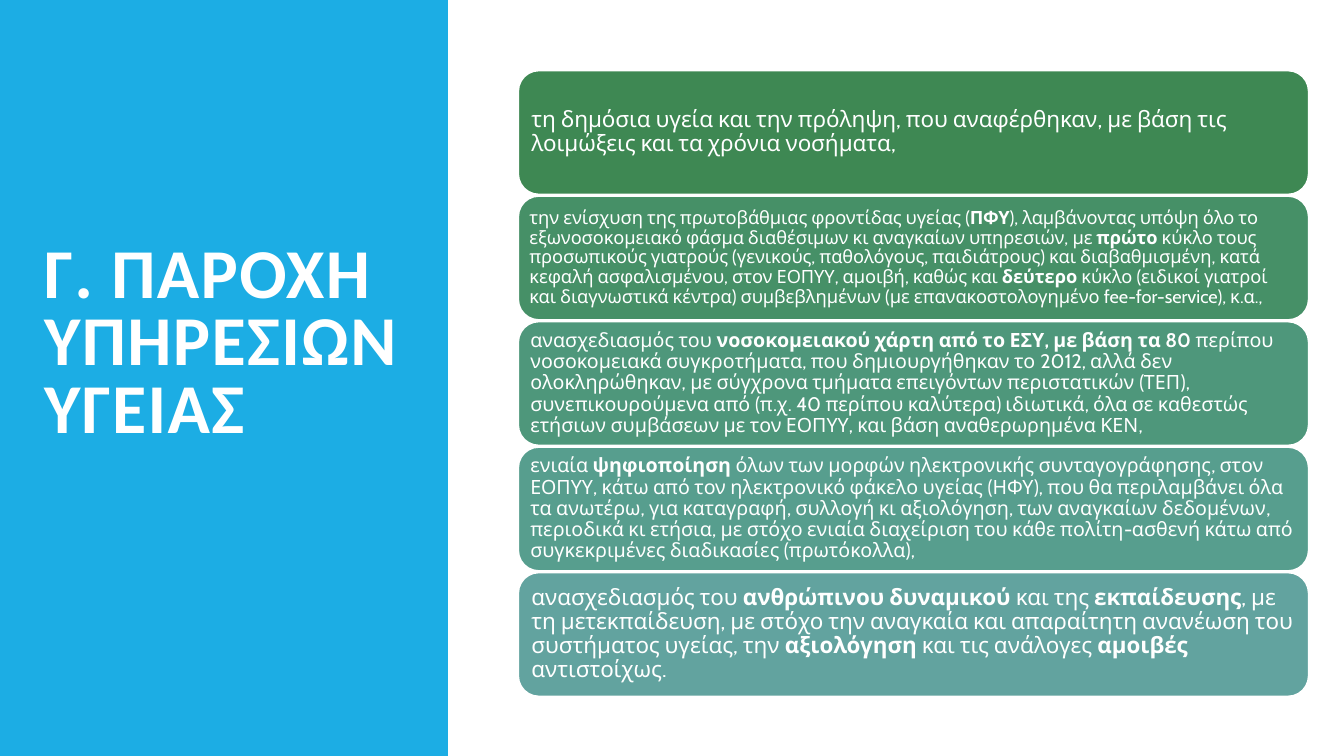
from dataclasses import dataclass

import pptx
import pptx.dml.color
import pptx.enum.shapes
import pptx.enum.text
import pptx.util

SLIDE_WIDTH = 13.33
SLIDE_HEIGHT = 7.5
COLOURS = {
    "panel": "1CADE4",
    "white": "FFFFFF",
    "prevention": "3E8853",
    "primary care": "469067",
    "hospitals": "4E977B",
    "digital": "579E8E",
    "workforce": "62A39F",
}
PANEL_SHARE = 1 / 3
CARD_LEFT = 5.14
CARD_WIDTH = 7.84
CARD_TOP = 0.7
CARD_HEIGHT = 1.23
CARD_PITCH = 1.245


@dataclass(frozen=True)
class Card:
    colour: str
    size: int
    inset: float
    text: str


CARDS = [
    Card("prevention", 16, 0.07,
         "τη δημόσια υγεία και την πρόληψη, που αναφέρθηκαν, με βάση τις "
         "λοιμώξεις και τα χρόνια νοσήματα,"),
    Card("primary care", 13, 0.05,
         "την ενίσχυση της πρωτοβάθμιας φροντίδας υγείας (*ΠΦΥ*), λαμβάνοντας "
         "υπόψη όλο το εξωνοσοκομειακό φάσμα διαθέσιμων κι αναγκαίων υπηρεσιών, "
         "με *πρώτο* κύκλο τους προσωπικούς γιατρούς (γενικούς, παθολόγους, "
         "παιδιάτρους) και διαβαθμισμένη, κατά κεφαλή ασφαλισμένου, στον ΕΟΠΥΥ, "
         "αμοιβή, καθώς και *δεύτερο* κύκλο (ειδικοί γιατροί και διαγνωστικά "
         "κέντρα) συμβεβλημένων (με επανακοστολογημένο fee-for-service), κ.α.,"),
    Card("hospitals", 14, 0.06,
         "ανασχεδιασμός του *νοσοκομειακού χάρτη από το ΕΣΥ, με βάση τα 80 *"
         "περίπου νοσοκομειακά συγκροτήματα, που δημιουργήθηκαν το 2012, αλλά "
         "δεν ολοκληρώθηκαν, με σύγχρονα τμήματα επειγόντων περιστατικών (ΤΕΠ), "
         "συνεπικουρούμενα από (π.χ. 40 περίπου καλύτερα) ιδιωτικά, όλα σε "
         "καθεστώς ετήσιων συμβάσεων με τον ΕΟΠΥΥ, και βάση αναθερωρημένα ΚΕΝ,"),
    Card("digital", 14, 0.06,
         "ενιαία *ψηφιοποίηση* όλων των μορφών ηλεκτρονικής συνταγογράφησης, "
         "στον ΕΟΠΥΥ, κάτω από τον ηλεκτρονικό φάκελο υγείας (ΗΦΥ), που θα "
         "περιλαμβάνει όλα τα ανωτέρω, για καταγραφή, συλλογή κι αξιολόγηση, "
         "των αναγκαίων δεδομένων, περιοδικά κι ετήσια, με στόχο ενιαία "
         "διαχείριση του κάθε πολίτη-ασθενή κάτω από συγκεκριμένες διαδικασίες "
         "(πρωτόκολλα),"),
    Card("workforce", 16, 0.07,
         "ανασχεδιασμός του *ανθρώπινου δυναμικού *και της *εκπαίδευσης*, με τη "
         "μετεκπαίδευση, με στόχο την αναγκαία και απαραίτητη ανανέωση του "
         "συστήματος υγείας, την *αξιολόγηση* και τις ανάλογες *αμοιβές* "
         "αντιστοίχως."),
]


def colour_of(name: str) -> pptx.dml.color.RGBColor:
    return pptx.dml.color.RGBColor.from_string(COLOURS[name])


def set_frame(frame, inset: float, bottom: float) -> None:
    frame.word_wrap = True
    frame.vertical_anchor = pptx.enum.text.MSO_ANCHOR.MIDDLE
    frame.margin_left = frame.margin_right = pptx.util.Inches(inset)
    frame.margin_top = pptx.util.Inches(inset)
    frame.margin_bottom = pptx.util.Inches(bottom)


def set_paragraph(para, font: str, size: int, spacing: float) -> None:
    para.alignment = pptx.enum.text.PP_ALIGN.LEFT
    para.line_spacing = spacing
    para.font.name = font
    para.font.size = pptx.util.Pt(size)
    para.font.color.rgb = colour_of("white")


def add_filled(page, kind, colour: str, left: float, top: float,
               width: float, height: float):
    shape = page.shapes.add_shape(
        kind, *map(pptx.util.Inches, (left, top, width, height)))
    shape.shadow.inherit = False
    shape.fill.solid()
    shape.fill.fore_color.rgb = colour_of(colour)
    return shape


def add_panel(page) -> None:
    panel = add_filled(page, pptx.enum.shapes.MSO_SHAPE.RECTANGLE, "panel",
                       0, 0, SLIDE_WIDTH * PANEL_SHARE, SLIDE_HEIGHT)
    panel.line.fill.background()


def add_title(page) -> None:
    box = page.shapes.add_textbox(
        *map(pptx.util.Inches, (0.34, 0.7, 3.75, 6.14)))
    set_frame(box.text_frame, 0.1, 0.78)
    para = box.text_frame.paragraphs[0]
    set_paragraph(para, "Calibri", 50, 0.8)
    para.font.bold = True
    span = para.add_run()
    span.text = "Γ. ΠΑΡΟΧΗ ΥΠΗΡΕΣΙΩΝ ΥΓΕΙΑΣ"
    span.font._element.set("spc", "100")


def add_card(page, row: int, card: Card) -> None:
    shape = add_filled(page, pptx.enum.shapes.MSO_SHAPE.ROUNDED_RECTANGLE,
                       card.colour, CARD_LEFT, CARD_TOP + row * CARD_PITCH,
                       CARD_WIDTH, CARD_HEIGHT)
    shape.line.color.rgb = colour_of("white")
    shape.line.width = pptx.util.Pt(1.25)
    set_frame(shape.text_frame, card.inset, card.inset)
    para = shape.text_frame.paragraphs[0]
    set_paragraph(para, "Cabin", card.size, 0.9)
    for position, text in enumerate(card.text.split("*")):
        span = para.add_run()
        span.text = text
        if position % 2:
            span.font.bold = True


def main() -> None:
    deck = pptx.Presentation()
    deck.slide_width = pptx.util.Inches(SLIDE_WIDTH)
    deck.slide_height = pptx.util.Inches(SLIDE_HEIGHT)
    page = deck.slides.add_slide(deck.slide_layouts[6])
    add_panel(page)
    add_title(page)
    for row, card in enumerate(CARDS):
        add_card(page, row, card)
    deck.save("out.pptx")


if __name__ == "__main__":
    main()
